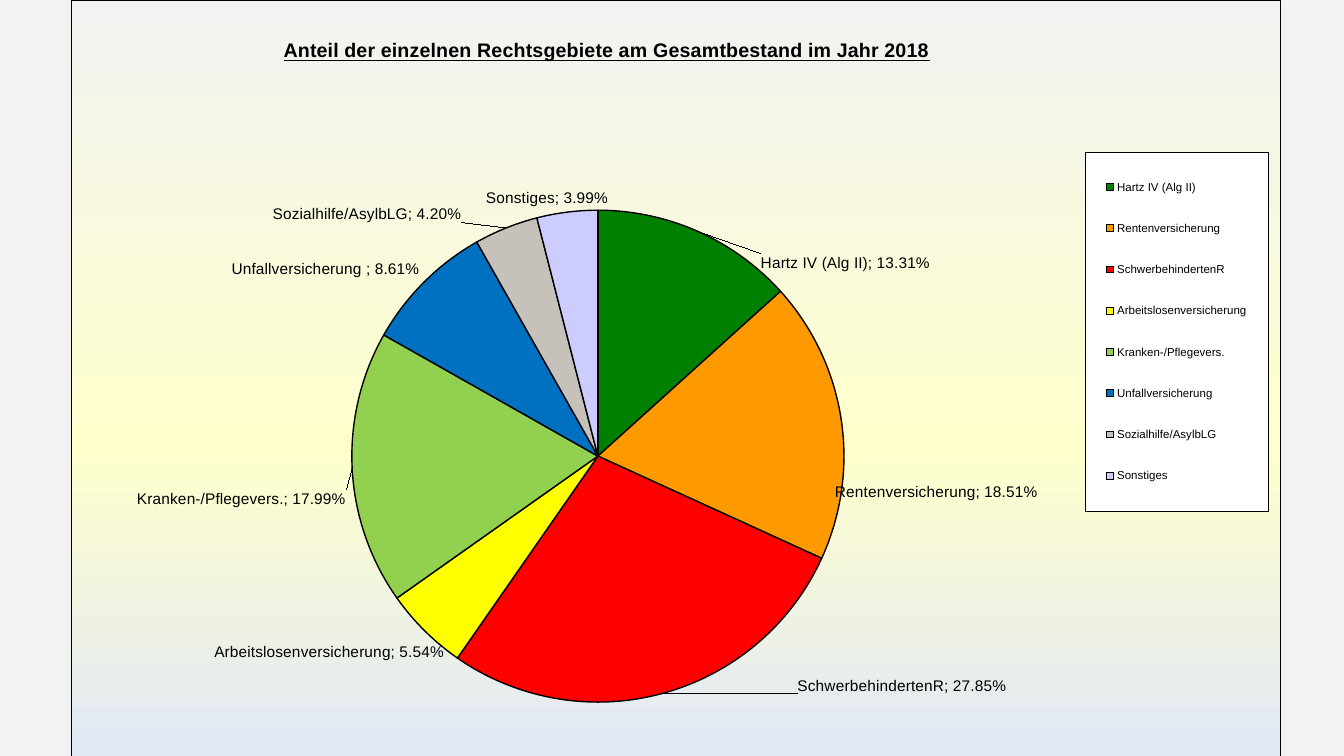
from copy import deepcopy

from pptx import Presentation
from pptx.chart.data import CategoryChartData
from pptx.dml.color import RGBColor
from pptx.enum.chart import XL_CHART_TYPE, XL_LABEL_POSITION, XL_LEGEND_POSITION
from pptx.oxml import parse_xml
from pptx.oxml.ns import nsdecls
from pptx.util import Inches, Pt

COLORS = {
    "background": "F2F2F2", "cream": "FFFFCC", "mist": "E1E8F5",
    "black": "000000", "white": "FFFFFF", "green": "008000",
    "orange": "FF9900", "red": "FF0000", "yellow": "FFFF00",
    "lime": "92D050", "blue": "0070C0", "gray": "C6C1BA", "lilac": "CCCCFF",
}
TITLE = "Anteil der einzelnen Rechtsgebiete am Gesamtbestand im Jahr 2018"
AREAS = [
    ("Hartz IV (Alg II)", 0.1331, "green"),
    ("Rentenversicherung", 0.1851, "orange"),
    ("SchwerbehindertenR", 0.2785, "red"),
    ("Arbeitslosenversicherung", 0.0554, "yellow"),
    ("Kranken-/Pflegevers.", 0.1799, "lime"),
    ("Unfallversicherung ", 0.0861, "blue"),
    ("Sozialhilfe/AsylbLG", 0.042, "gray"),
    ("Sonstiges", 0.0399, "lilac"),
]
LABEL_SHIFTS = [(0.05, 0.06), (-0.01, 0.11), (0.11, -0.03), (0.02, 0.01), (0, 0.04)]


def format_font(font, size, **options):
    font.name = "Arial"
    font.size = Pt(size)
    font.color.rgb = RGBColor.from_string(COLORS["black"])
    for name, value in options.items():
        setattr(font, name, value)


def write_text(frame, text, size, **options):
    paragraph = frame.paragraphs[0]
    run = paragraph.add_run()
    run.text = text
    format_font(run.font, size, **options)


def manual_layout(x, y, width=None, height=None, inner=False, shift=False):
    target = '<c:layoutTarget val="inner"/>' if inner else ""
    modes = "" if shift else '<c:xMode val="edge"/><c:yMode val="edge"/>'
    lengths = zip("xywh", (x, y, width, height))
    values = "".join(f'<c:{key} val="{value}"/>' for key, value in lengths if value is not None)
    return parse_xml(f'<c:layout {nsdecls("c")}><c:manualLayout>{target}{modes}{values}'
                     '</c:manualLayout></c:layout>')


def place(element, layout, after=None):
    for previous in element.xpath("./c:layout"):
        element.remove(previous)
    if after is None:
        element.insert(0, layout)
    else:
        element.xpath(f"./{after}")[0].addnext(layout)


def frame_properties(fill, width):
    return parse_xml(f'<c:spPr {nsdecls("c", "a")}>{fill}<a:ln w="{Pt(width)}"><a:solidFill>'
                     f'<a:srgbClr val="{COLORS["black"]}"/></a:solidFill></a:ln></c:spPr>')


class PieSlide:
    """Build a slide with a styled pie chart."""

    def __init__(self, presentation):
        self.width = presentation.slide_width
        self.height = presentation.slide_height
        self.slide = presentation.slides.add_slide(presentation.slide_layouts[6])
        fill = self.slide.background.fill
        fill.solid()
        fill.fore_color.rgb = RGBColor.from_string(COLORS["background"])

    def add_pie(self, left, top, width, height):
        data = CategoryChartData(number_format="0.00%")
        data.categories = [name for name, _, _ in AREAS]
        data.add_series("Series 1", [share for _, share, _ in AREAS])
        frame = self.slide.shapes.add_chart(
            XL_CHART_TYPE.PIE, int(left * self.width), int(top * self.height),
            int(width * self.width), int(height * self.height), data)
        self.chart = frame.chart
        format_font(self.chart.font, 21.8)
        plot = self.chart.plots[0]
        plot.vary_by_categories = True
        for index, (_, _, color) in enumerate(AREAS):
            style = plot.series[0].points[index].format
            style.fill.solid()
            style.fill.fore_color.rgb = RGBColor.from_string(COLORS[color])
            style.line.color.rgb = RGBColor.from_string(COLORS["black"])
            style.line.width = Pt(1)
        plot_area = self.chart._chartSpace.xpath("./c:chart/c:plotArea")[0]
        place(plot_area, manual_layout(0.23, 0.278, 0.412, 0.651, inner=True))

    def add_background(self):
        stops = [(0, "background"), (59, "cream"), (100, "mist")]
        stop_list = "".join(f'<a:gs pos="{share * 1000}"><a:srgbClr val="{COLORS[name]}"/></a:gs>'
                            for share, name in stops)
        fill = f'<a:gradFill><a:gsLst>{stop_list}</a:gsLst><a:lin ang="5400000" scaled="0"/></a:gradFill>'
        text_properties = self.chart._chartSpace.xpath("./c:txPr")[0]
        text_properties.addprevious(frame_properties(fill, 0.25))

    def add_title(self, text, x, y):
        title = self.chart.chart_title
        write_text(title.text_frame, text, 14, bold=True, underline=True)
        place(title._element, manual_layout(x, y), after="c:tx")

    def add_legend(self, x, y, width, height):
        self.chart.has_legend = True
        legend = self.chart.legend
        legend.position = XL_LEGEND_POSITION.RIGHT
        legend.include_in_layout = False
        format_font(legend.font, 8.2)
        place(legend._element, manual_layout(x, y, width, height), after="c:legendPos")
        fill = f'<a:solidFill><a:srgbClr val="{COLORS["white"]}"/></a:solidFill>'
        legend._element.xpath("./c:txPr")[0].addprevious(frame_properties(fill, 0.25))

    def add_labels(self):
        labels = self.chart.plots[0].series[0].data_labels
        labels.show_value = True
        labels.show_category_name = True
        labels.show_percentage = False
        labels.number_format = "0.00%"
        labels.number_format_is_linked = False
        labels.position = XL_LABEL_POSITION.BEST_FIT
        format_font(labels.font, 11)
        element = labels._element
        element.xpath("./c:showBubbleSize")[0].addnext(
            parse_xml(f'<c:separator {nsdecls("c")}>; </c:separator>'))
        shared = [child for child in element if not child.tag.endswith("showLeaderLines")]
        for index, (x, y) in enumerate(LABEL_SHIFTS):
            label = parse_xml(f'<c:dLbl {nsdecls("c")}><c:idx val="{index}"/></c:dLbl>')
            label.append(manual_layout(x, y, shift=True))
            label.extend([deepcopy(child) for child in shared])
            element.insert(index, label)


def main():
    presentation = Presentation()
    presentation.slide_width = Inches(13.33)
    presentation.slide_height = Inches(7.5)
    pie_slide = PieSlide(presentation)
    pie_slide.add_pie(0.0525, 0, 0.9, 1)
    pie_slide.add_background()
    pie_slide.add_title(TITLE, 0.173, 0.045)
    pie_slide.add_legend(0.839, 0.201, 0.151, 0.475)
    pie_slide.add_labels()
    presentation.save("out.pptx")


if __name__ == "__main__":
    main()
